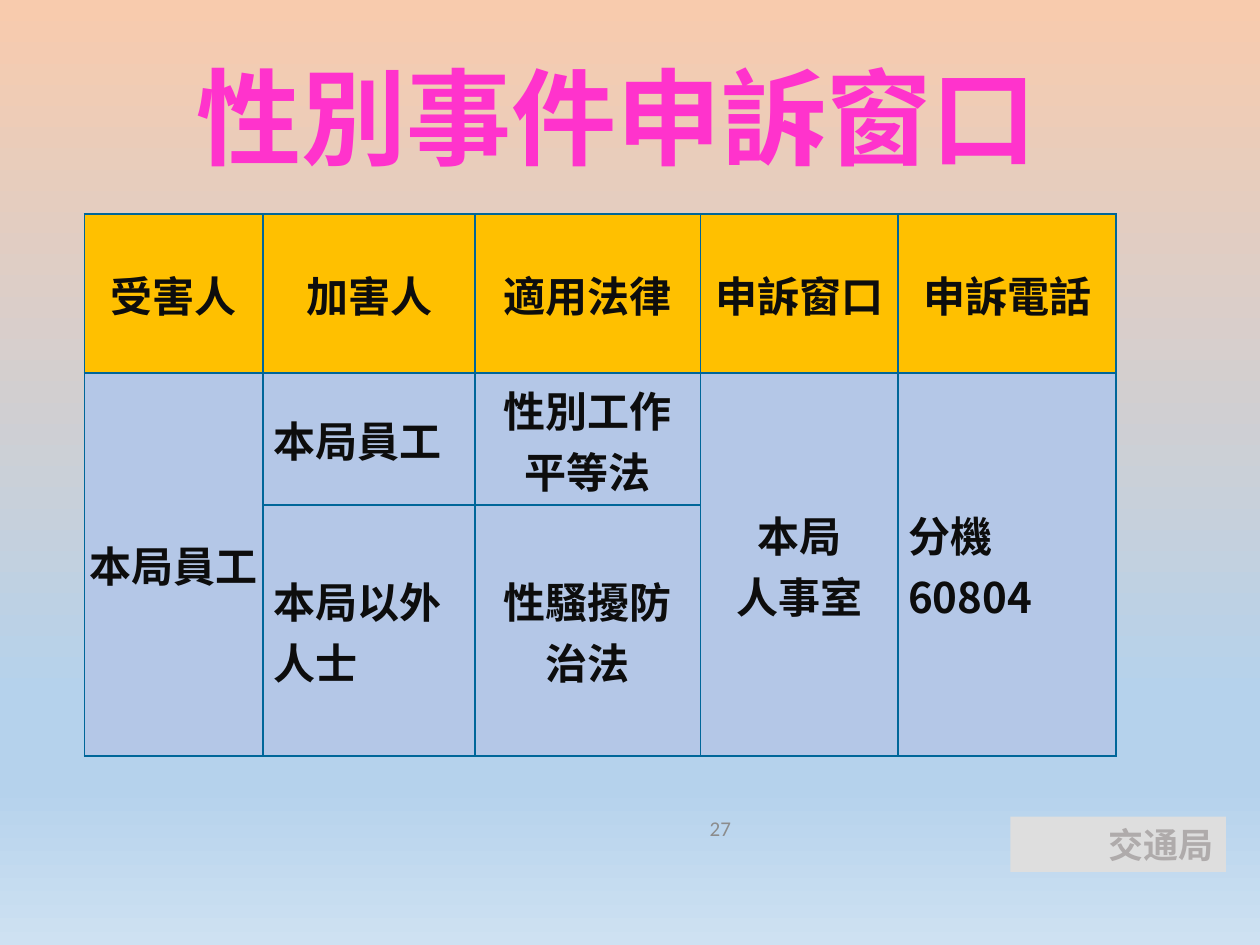
from dataclasses import dataclass

from lxml import etree
from pptx import Presentation
from pptx.dml.color import RGBColor
from pptx.enum.shapes import MSO_SHAPE
from pptx.enum.text import MSO_ANCHOR, PP_ALIGN
from pptx.oxml.ns import qn
from pptx.util import Pt

LEFT, CENTER, RIGHT, JUSTIFY = PP_ALIGN.LEFT, PP_ALIGN.CENTER, PP_ALIGN.RIGHT, PP_ALIGN.JUSTIFY
MIDDLE, BOTTOM = MSO_ANCHOR.MIDDLE, MSO_ANCHOR.BOTTOM
RECTANGLE = MSO_SHAPE.RECTANGLE


@dataclass(frozen=True)
class Theme:
    cjk_font: str = "Noto Sans CJK SC"
    latin_font: str = "Calibri"
    title_size: int = 60
    table_size: int = 24
    bureau_size: int = 20
    number_size: int = 12
    title: str = "FF33CC"
    ink: str = "0D0D0D"
    header_fill: str = "FFC000"
    body_fill: str = "B4C7E7"
    border: str = "006699"
    bureau: str = "AFABAB"
    bureau_fill: str = "DEDEDE"
    number: str = "8C8C8C"
    background: tuple = ((0, "F8CBAD"), (74, "B5D2EC"), (83, "B5D2EC"), (100, "CEE1F2"))


THEME = Theme()

COLUMN_WIDTHS = (102.24, 120.96, 128.88, 113.04, 124.56)
ROW_HEIGHTS = (90.72, 75.6, 143.28)
HEADERS = ("受害人", "加害人", "適用法律", "申訴窗口", "申訴電話")
CELL_INSETS = (5.76, 0.72, 5.76, 0)
# row, column, rows spanned, text, alignment, insets
BODY_CELLS = (
    (1, 0, 2, "本局員工", CENTER, (0, 0, 0, 0)),
    (1, 1, 1, "本局員工", JUSTIFY, CELL_INSETS),
    (1, 2, 1, "性別工作平等法", CENTER, CELL_INSETS),
    (1, 3, 2, "本局\n人事室", CENTER, (7.2, 3.6, 7.2, 3.6)),
    (1, 4, 2, "分機60804", LEFT, CELL_INSETS),
    (2, 1, 1, "本局以外人士", LEFT, CELL_INSETS),
    (2, 2, 1, "性騷擾防治法", CENTER, CELL_INSETS),
)


def write(frame, text, *, size, color, font=THEME.cjk_font, bold=True,
          align=CENTER, spacing=None):
    """Fill a text frame, one paragraph for each line of text."""
    frame.word_wrap = True
    for index, line in enumerate(text.split("\n")):
        paragraph = frame.add_paragraph() if index else frame.paragraphs[0]
        paragraph.alignment = align
        if spacing is not None:
            paragraph.line_spacing = spacing
        run = paragraph.add_run()
        run.text = line
        run.font.size = Pt(size)
        run.font.bold = bold
        run.font.color.rgb = RGBColor.from_string(color)
        run.font.name = font
        etree.SubElement(run.font._element, qn("a:ea"), typeface=font)


def paint_background(slide):
    fill = slide.background.fill
    fill.gradient()
    fill.gradient_angle = 270
    stops = fill._fill._gradFill.find(qn("a:gsLst"))
    for stop in list(stops):
        stops.remove(stop)
    for percent, color in THEME.background:
        stop = etree.SubElement(stops, qn("a:gs"), pos=str(percent * 1000))
        etree.SubElement(stop, qn("a:srgbClr"), val=color)


def add_text_box(slide, box, text, anchor, **text_format):
    frame = slide.shapes.add_textbox(*map(Pt, box)).text_frame
    frame.vertical_anchor = anchor
    write(frame, text, **text_format)


def add_bureau_tag(slide):
    tag = slide.shapes.add_shape(RECTANGLE, *map(Pt, (577.4, 466.6, 123.1, 31.7)))
    tag.shadow.inherit = False
    tag.fill.solid()
    tag.fill.fore_color.rgb = RGBColor.from_string(THEME.bureau_fill)
    tag.line.fill.background()
    write(tag.text_frame, "交通局", size=THEME.bureau_size, color=THEME.bureau,
          align=RIGHT, spacing=Pt(24))


def style_cell(cell, fill):
    properties = cell._tc.get_or_add_tcPr()
    for side in ("lnL", "lnR", "lnT", "lnB"):
        line = etree.SubElement(properties, qn(f"a:{side}"), w=str(Pt(1)))
        solid = etree.SubElement(line, qn("a:solidFill"))
        etree.SubElement(solid, qn("a:srgbClr"), val=THEME.border)
    cell.fill.solid()
    cell.fill.fore_color.rgb = RGBColor.from_string(fill)


def fill_cell(cell, text, align, insets):
    cell.vertical_anchor = MIDDLE
    cell.margin_left, cell.margin_top, cell.margin_right, cell.margin_bottom = map(Pt, insets)
    write(cell.text_frame, text, size=THEME.table_size, color=THEME.ink, align=align)


def add_contact_table(slide):
    size = sum(COLUMN_WIDTHS), sum(ROW_HEIGHTS)
    table = slide.shapes.add_table(len(ROW_HEIGHTS), len(COLUMN_WIDTHS),
                                   *map(Pt, (48.2, 122.4, *size))).table
    table.first_row = table.horz_banding = False
    for column, width in zip(table.columns, COLUMN_WIDTHS):
        column.width = Pt(width)
    for index, (row, height) in enumerate(zip(table.rows, ROW_HEIGHTS)):
        row.height = Pt(height)
        for cell in row.cells:
            style_cell(cell, THEME.body_fill if index else THEME.header_fill)
    for column, header in enumerate(HEADERS):
        fill_cell(table.cell(0, column), header, CENTER, CELL_INSETS)
    for row, column, span, text, align, insets in BODY_CELLS:
        cell = table.cell(row, column)
        if span > 1:
            cell.merge(table.cell(row + span - 1, column))
        fill_cell(cell, text, align, insets)


def main():
    deck = Presentation()
    deck.slide_width, deck.slide_height = Pt(720), Pt(540)
    slide = deck.slides.add_slide(deck.slide_layouts[6])
    paint_background(slide)
    add_bureau_tag(slide)
    add_text_box(slide, (31, 25.9, 643, 80.6), "性別事件申訴窗口", BOTTOM,
                 size=THEME.title_size, color=THEME.title, spacing=0.9)
    add_contact_table(slide)
    add_text_box(slide, (371.5, 453.6, 53.3, 39.6), "27", MIDDLE, size=THEME.number_size,
                 color=THEME.number, font=THEME.latin_font, bold=False, align=RIGHT)
    deck.save("out.pptx")


if __name__ == "__main__":
    main()
